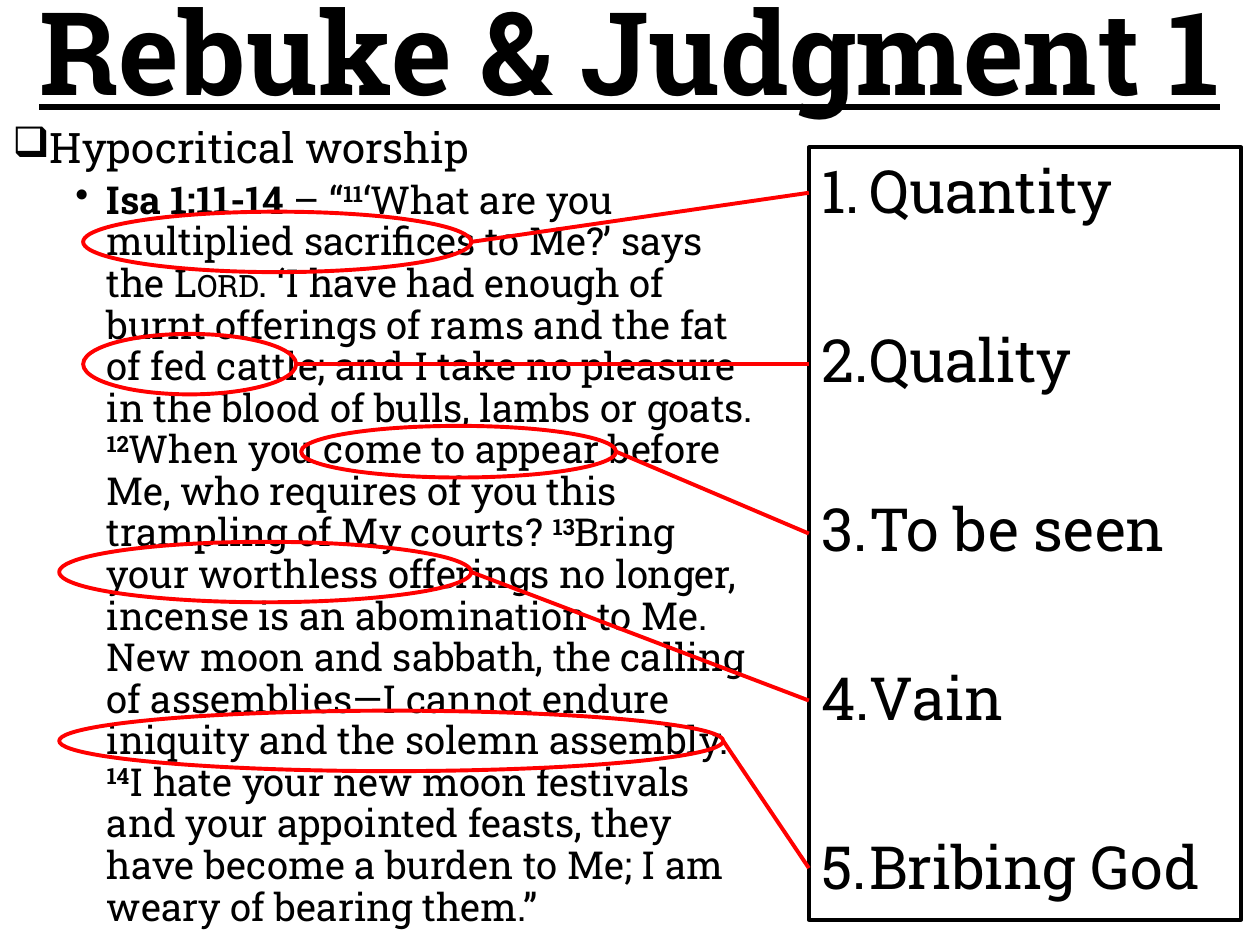
from lxml import etree
from pptx import Presentation
from pptx.dml.color import RGBColor
from pptx.enum.shapes import MSO_CONNECTOR, MSO_SHAPE
from pptx.enum.text import MSO_ANCHOR, PP_ALIGN
from pptx.oxml.ns import qn
from pptx.util import Inches, Pt

STRAIGHT = MSO_CONNECTOR.STRAIGHT
RECTANGLE, OVAL = MSO_SHAPE.RECTANGLE, MSO_SHAPE.OVAL
TOP, MIDDLE = MSO_ANCHOR.TOP, MSO_ANCHOR.MIDDLE
LEFT, CENTER = PP_ALIGN.LEFT, PP_ALIGN.CENTER
LEFT_SIDE = 1

COLORS = {"text": "000000", "mark": "FF0000"}
FONT = "Roboto Slab"
COLUMNS, ROWS = 100, 75

# Verse text in pieces: (wording, style)
PASSAGE = [
    ("Isa 1:11-14", "bold"),
    (" – “", "plain"),
    ("11", "verse"),
    ("‘What are you multiplied sacrifices to Me?’ says the ", "plain"),
    ("Lord", "small caps"),
    (". ‘I have had enough of burnt offerings of rams and the fat of fed cattle; "
     "and I take no pleasure in the blood of bulls, lambs or goats. ", "plain"),
    ("12", "verse"),
    ("When you come to appear before Me, who requires of you this trampling "
     "of My courts? ", "plain"),
    ("13", "verse"),
    ("Bring your worthless offerings no longer, incense is an abomination to Me. "
     "New moon and sabbath, the calling of assemblies—I cannot endure iniquity "
     "and the solemn assembly. ", "plain"),
    ("14", "verse"),
    ("I hate your new moon festivals and your appointed feasts, they have become "
     "a burden to Me; I am weary of bearing them.”", "plain"),
]

# Fault, ellipse (column, row, columns, rows), row where its line meets the box
FAULTS = [
    ("Quantity", (6.6, 16.8, 30.8, 4.8), 15.3),
    ("Quality", (6.6, 26.5, 16.9, 4.8), 28.9),
    ("To be seen", (23.9, 33.8, 25, 4.1), 42.35),
    ("Vain", (4.7, 43, 32.7, 4.8), 55.6),
    ("Bribing God", (4.7, 56.4, 52.7, 4.8), 68.9),
]
BOX = (64.2, 11.7, 34.3, 61.3)


class Deck:
    def __init__(self):
        self.prs = Presentation()
        self.prs.slide_width, self.prs.slide_height = Inches(10), Inches(7.5)
        self.slide = self.prs.slides.add_slide(self.prs.slide_layouts[6])

    def x(self, columns):
        return round(self.prs.slide_width * columns / COLUMNS)

    def y(self, rows):
        return round(self.prs.slide_height * rows / ROWS)

    def place(self, area):
        left, top, width, height = area
        return self.x(left), self.y(top), self.x(width), self.y(height)

    def text_frame(self, area, anchor=TOP):
        frame = self.slide.shapes.add_textbox(*self.place(area)).text_frame
        frame.word_wrap, frame.vertical_anchor = True, anchor
        return frame

    def paragraph(self, frame, size, text="", align=LEFT, spacing=1.0, before=0):
        first = frame.paragraphs[0]
        para = frame.add_paragraph() if first.runs else first
        para.alignment, para.line_spacing = align, spacing
        para.space_before = Pt(before)
        para.font.name, para.font.size = FONT, Pt(size)
        para.font.color.rgb = RGBColor.from_string(COLORS["text"])
        if text:
            para.add_run().text = text
        return para

    def bullet(self, para, margin, hanging, tag, **attributes):
        props = para._p.get_or_add_pPr()
        props.set("marL", str(Inches(margin)))
        props.set("indent", str(-Inches(hanging)))
        mark = etree.Element(qn("a:" + tag), attributes)
        props.find(qn("a:defRPr")).addprevious(mark)

    def styled_run(self, para, text, style):
        run = para.add_run()
        run.text = text
        if style in ("bold", "verse"):
            run.font.bold = True
        if style == "verse":
            run._r.get_or_add_rPr().set("baseline", "30000")
        if style == "small caps":
            run._r.get_or_add_rPr().set("cap", "small")

    def outline(self, shapes, preset, area, color):
        shape = shapes.add_shape(preset, *self.place(area))
        shape.shadow.inherit = False
        shape.fill.background()
        shape.line.color.rgb = RGBColor.from_string(COLORS[color])
        shape.line.width = Pt(2.25)
        return shape

    def callout(self, ellipse, box, target_row):
        group = self.slide.shapes.add_group_shape().shapes
        oval = self.outline(group, OVAL, ellipse, "mark")
        target = self.y(target_row)
        line = group.add_connector(STRAIGHT, oval.left + oval.width,
                                   oval.top + oval.height // 2, box.left, target)
        line.line.color.rgb = RGBColor.from_string(COLORS["mark"])
        line.line.width = Pt(2.25)
        etree.SubElement(line._element.spPr, qn("a:effectLst"))
        if abs(target - box.top - box.height // 2) < self.y(0.1):
            line.end_connect(box, LEFT_SIDE)


def main():
    deck = Deck()

    # Title
    title = deck.text_frame((0, 0, 100, 9.2), MIDDLE)
    heading = deck.paragraph(title, 66, "Rebuke & Judgment 1", CENTER, 0.9)
    heading.font.bold = heading.font.underline = True

    # Topic and passage
    body = deck.text_frame((0, 9.6, 61, 65.4))
    topic = deck.paragraph(body, 24, "Hypocritical worship", spacing=0.9)
    deck.bullet(topic, 0.25, 0.25, "buChar", char="❑")
    passage = deck.paragraph(body, 22, spacing=0.9, before=5)
    deck.bullet(passage, 0.75, 0.25, "buChar", char="•")
    for wording, style in PASSAGE:
        deck.styled_run(passage, wording, style)

    # Numbered faults
    box = deck.outline(deck.slide.shapes, RECTANGLE, BOX, "text")
    faults = box.text_frame
    faults.word_wrap, faults.vertical_anchor = True, TOP
    for number, (fault, ellipse, target_row) in enumerate(FAULTS, 1):
        para = deck.paragraph(faults, 34, fault, before=55.8 if number > 1 else 0)
        deck.bullet(para, 0.38, 0.38, "buAutoNum", type="arabicPeriod",
                    startAt=str(number))

    # Circled phrases linked to their faults
    for fault, ellipse, target_row in FAULTS:
        deck.callout(ellipse, box, target_row)

    deck.prs.save("out.pptx")


if __name__ == "__main__":
    main()
